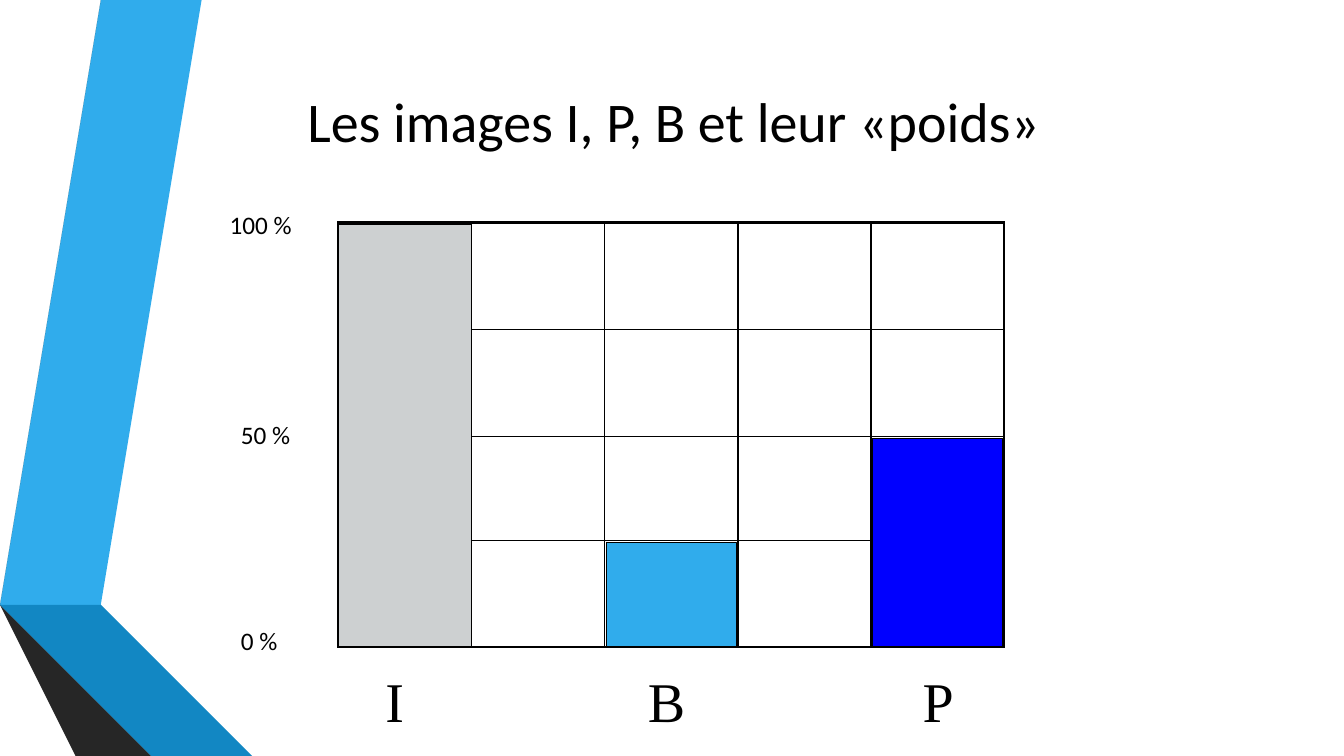
from dataclasses import dataclass
from lxml.etree import SubElement
from pptx import Presentation
from pptx.dml.color import RGBColor
from pptx.enum.shapes import MSO_SHAPE
from pptx.enum.text import MSO_ANCHOR, PP_ALIGN
from pptx.oxml.ns import qn
from pptx.util import Emu, Inches, Pt


@dataclass(frozen=True)
class Theme:
    ink: str = "000000"
    i_bar: str = "CDD0D1"
    b_bar: str = "30ACEC"
    p_bar: str = "0000FF"
    body_font: str = "Calibri"
    letter_font: str = "Times New Roman"
    large: int = 40
    small: int = 18
    frame_line: float = 2.25
    grid_line: float = 1
    bar_line: float = 0.75


@dataclass(frozen=True)
class Box:
    left: float
    top: float
    width: float
    height: float

    def lengths(self):
        return [Inches(v) for v in (self.left, self.top, self.width, self.height)]


THEME = Theme()
COLUMNS = [1.32] * 5
ROWS = [1.06, 1.06, 1.03, 1.06]
PLOT = Box(3.36, 2.21, sum(COLUMNS), sum(ROWS))

# Ribbon facets: colour and corner points
RIBBON = [
    ("30ACEC", [(0.5, 5.78), (0.77, 5.83), (1.73, 0), (1.45, 0)]),
    ("595959", [(1.39, 0), (1.11, 0), (0.16, 5.73), (0.44, 5.77)]),
    ("262626", [(0.16, 5.73), (1.45, 7.5), (1.51, 7.5)]),
    ("0C5A82", [(0.5, 5.79), (2.08, 7.5), (2.14, 7.5)]),
    ("1287C3", [(0.5, 5.79), (2.14, 7.5), (2.83, 7.5), (0.77, 5.83), (0.5, 5.78)]),
    ("404040", [(2.02, 7.5), (0.48, 5.83), (0.43, 5.78), (0.44, 5.77),
                (0.16, 5.73), (1.51, 7.5)]),
]

# Bars: grid column, rows filled, colour, gap to the column's edges
BARS = [(0, 4, THEME.i_bar, 0), (4, 2, THEME.p_bar, 0.015), (2, 1, THEME.b_bar, 0.015)]


def paint(shape, colour):
    shape.shadow.inherit = False
    shape.fill.solid()
    shape.fill.fore_color.rgb = RGBColor.from_string(colour)


def write(frame, text, size, font, align):
    frame.word_wrap = True
    frame.text = text
    paragraph = frame.paragraphs[0]
    paragraph.alignment = align
    run_font = paragraph.runs[0].font
    run_font.size, run_font.name = Pt(size), font
    run_font.color.rgb = RGBColor.from_string(THEME.ink)


def add_label(slide, box, text, size, font, align):
    label = slide.shapes.add_textbox(*box.lengths())
    write(label.text_frame, text, size, font, align)


def add_ribbon(slide):
    for colour, (start, *corners) in RIBBON:
        builder = slide.shapes.build_freeform(*start, scale=Inches(1))
        builder.add_line_segments(corners, close=True)
        facet = builder.convert_to_shape(Emu(0), Emu(0))
        paint(facet, colour)
        facet.line.fill.background()


def add_title(slide, box):
    title = slide.shapes.title
    title.left, title.top, title.width, title.height = box.lengths()
    title.text_frame.vertical_anchor = MSO_ANCHOR.MIDDLE
    write(title.text_frame, "Les images I, P, B et leur «poids»",
          THEME.large, THEME.body_font, PP_ALIGN.CENTER)


def add_border(cell, side, width):
    line = SubElement(cell._tc.get_or_add_tcPr(), qn(f"a:ln{side}"), w=str(Pt(width)))
    fill = SubElement(line, qn("a:solidFill"))
    SubElement(fill, qn("a:srgbClr"), val=THEME.ink)


def add_grid(slide, box):
    grid = slide.shapes.add_table(len(ROWS), len(COLUMNS), *box.lengths()).table
    grid.first_row = grid.horz_banding = False
    for column, width in zip(grid.columns, COLUMNS):
        column.width = Inches(width)
    for r, height in enumerate(ROWS):
        grid.rows[r].height = Inches(height)
        for c in range(len(COLUMNS)):
            cell = grid.cell(r, c)
            outer = {"L": c == 0, "R": c == len(COLUMNS) - 1,
                     "T": r == 0, "B": r == len(ROWS) - 1}
            for side, on_frame in outer.items():
                add_border(cell, side, THEME.frame_line if on_frame else THEME.grid_line)
            cell.fill.background()


def add_bars(slide, box):
    base = box.top + box.height - 0.01
    for column, filled, colour, gap in BARS:
        top = box.top + sum(ROWS[:len(ROWS) - filled]) + 0.02
        place = Box(box.left + sum(COLUMNS[:column]) + gap, top,
                    COLUMNS[column] - 2 * gap, base - top)
        bar = slide.shapes.add_shape(MSO_SHAPE.RECTANGLE, *place.lengths())
        paint(bar, colour)
        bar.line.color.rgb = RGBColor.from_string(THEME.ink)
        bar.line.width = Pt(THEME.bar_line)


def add_axis_labels(slide, box):
    # Image types below the grid
    for i, letter in enumerate("IBP"):
        place = Box(box.left + 0.25 + 2.695 * i, box.top + box.height + 0.14, 0.61, 0.77)
        add_label(slide, place, letter, THEME.large, THEME.letter_font, PP_ALIGN.CENTER)
    # Percentages left of the grid: text, offset from the grid, width
    for text, dx, dy, width in [("100 %", -1.18, -0.18, 1.07),
                                ("50 %", -1.07, 1.9, 0.85),
                                ("0 %", -1.07, 3.94, 0.85)]:
        place = Box(box.left + dx, box.top + dy, width, 0.4)
        add_label(slide, place, text, THEME.small, THEME.body_font, PP_ALIGN.LEFT)


def main():
    deck = Presentation()
    deck.slide_width, deck.slide_height = Inches(13.33), Inches(7.5)
    slide = deck.slides.add_slide(deck.slide_layouts[5])
    add_ribbon(slide)
    add_title(slide, Box(2.18, 0.44, 9, 1.5))
    add_grid(slide, PLOT)
    add_axis_labels(slide, PLOT)
    add_bars(slide, PLOT)
    deck.save("out.pptx")


if __name__ == "__main__":
    main()
